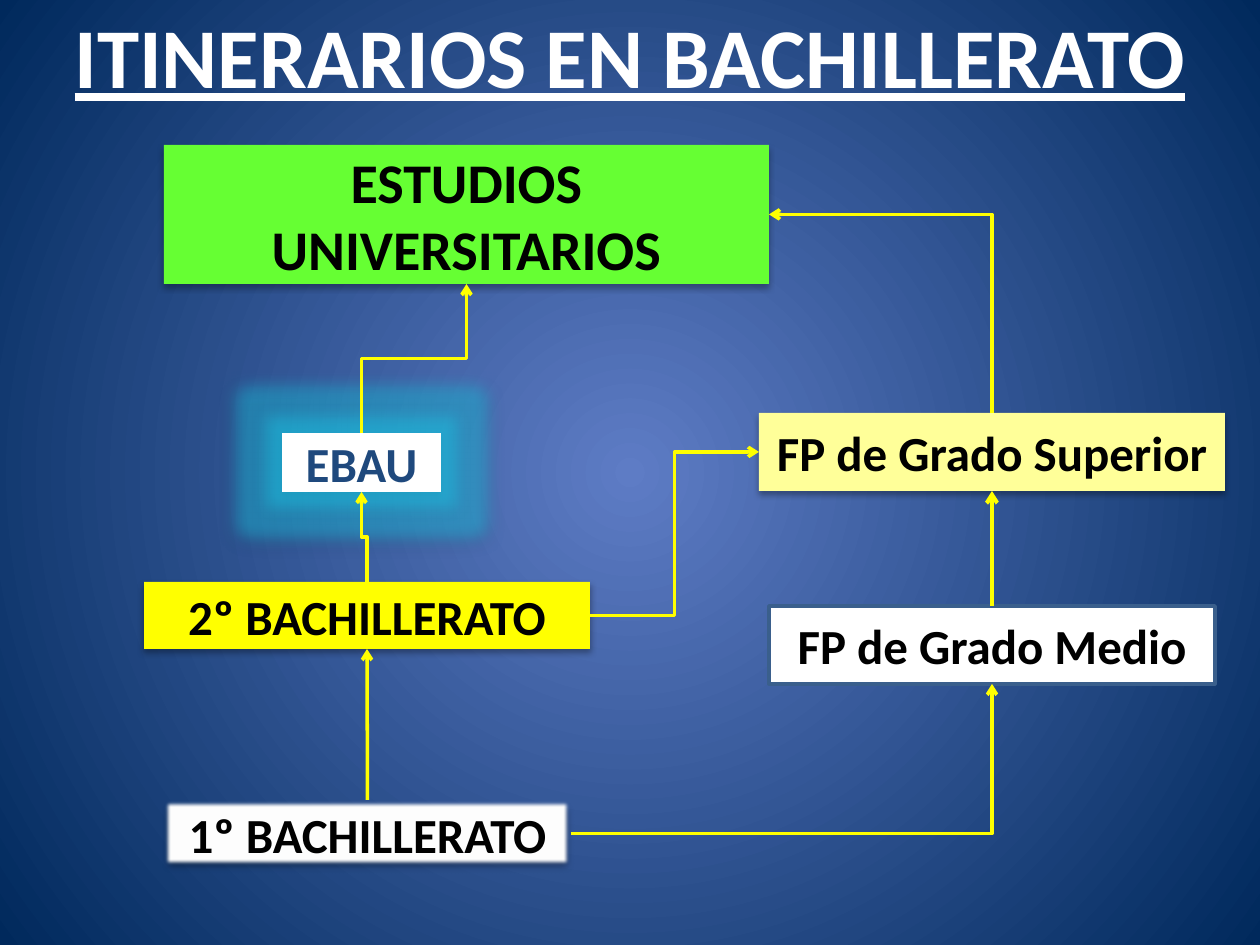
from lxml.etree import SubElement, fromstring
from pptx import Presentation
from pptx.dml.color import RGBColor
from pptx.enum.shapes import MSO_CONNECTOR, MSO_SHAPE
from pptx.enum.text import MSO_ANCHOR, MSO_AUTO_SIZE, PP_ALIGN
from pptx.oxml.ns import nsdecls, qn
from pptx.util import Pt

EMU_PER_PX = 914400 / 126
FONT = "Calibri"
TOP, LEFT, BOTTOM, RIGHT = range(4)
COLORS = {
    "center": "5E7CC5", "edge": "00295C", "white": "FFFFFF", "black": "000000",
    "green": "66FF33", "cream": "FFFF99", "yellow": "FFFF00", "navy": "1F497D",
    "border": "3A5F8C", "glow": "1CD3F4",
}
SHADOW = (
    '<a:outerShdw blurRad="44450" dist="27940" dir="5400000" rotWithShape="0">'
    f'<a:srgbClr val="{COLORS["black"]}"><a:alpha val="32000"/></a:srgbClr></a:outerShdw>'
)
GLOW = (
    f'<a:glow rad="228600"><a:srgbClr val="{COLORS["glow"]}">'
    '<a:alpha val="40000"/></a:srgbClr></a:glow>'
)
SOFT_EDGE = '<a:softEdge rad="31750"/>'


def px(n):
    return round(n * EMU_PER_PX)


def rgb(name):
    return RGBColor.from_string(COLORS[name])


def set_background(s):
    s.background.fill.solid()
    bg_pr = s.background._cSld.bg.bgPr
    stops = "".join(
        f'<a:gs pos="{pos}"><a:srgbClr val="{COLORS[name]}"/></a:gs>'
        for pos, name in ((0, "center"), (100000, "edge"))
    )
    grad = fromstring(
        f'<a:gradFill {nsdecls("a")} rotWithShape="1"><a:gsLst>{stops}</a:gsLst>'
        '<a:path path="circle"><a:fillToRect l="50000" t="50000" r="50000" b="50000"/>'
        '</a:path></a:gradFill>'
    )
    bg_pr.replace(bg_pr[0], grad)


def write(sp, text, size, color, underline=None):
    tf = sp.text_frame
    tf.word_wrap = True
    tf.auto_size = MSO_AUTO_SIZE.NONE
    tf.vertical_anchor = MSO_ANCHOR.MIDDLE
    p = tf.paragraphs[0]
    p.alignment = PP_ALIGN.CENTER
    r = p.add_run()
    r.text = text
    font = r.font
    font.name, font.size, font.bold, font.underline = FONT, Pt(size), True, underline
    font.color.rgb = rgb(color)


def add_title(s, text):
    title = s.shapes.title
    title.left, title.top, title.width, title.height = map(px, (0, -24, 1260, 157))
    write(title, text, 48.6, "white", True)


def add_box(s, text, bounds, fill, color="black", size=28, effects=SHADOW, border=None):
    sp = s.shapes.add_shape(MSO_SHAPE.RECTANGLE, *map(px, bounds))
    sp.shadow.inherit = False
    sp.fill.solid()
    sp.fill.fore_color.rgb = rgb(fill)
    if border:
        sp.line.color.rgb = rgb(border)
        sp.line.width = Pt(2)
    else:
        sp.line.fill.background()
    if effects:
        sp_pr = sp._element.spPr
        effect_list = fromstring(f'<a:effectLst {nsdecls("a")}>{effects}</a:effectLst>')
        sp_pr.replace(sp_pr.find(qn("a:effectLst")), effect_list)
    write(sp, text, size, color)
    return sp


def add_arrow(s, start, start_side, end, end_side, kind=MSO_CONNECTOR.STRAIGHT, width=2):
    cxn = s.shapes.add_connector(kind, 0, 0, 0, 0)
    cxn.begin_connect(start, start_side)
    cxn.end_connect(end, end_side)
    cxn.line.color.rgb = rgb("yellow")
    cxn.line.width = Pt(width)
    sp_pr = cxn._element.spPr
    SubElement(sp_pr.find(qn("a:ln")), qn("a:tailEnd"), type="arrow")
    SubElement(sp_pr, qn("a:effectLst"))
    return cxn


def add_elbow(s, start, start_side, end, end_side):
    cxn = add_arrow(s, start, start_side, end, end_side, MSO_CONNECTOR.ELBOW)
    dx, dy = cxn.end_x - cxn.begin_x, cxn.end_y - cxn.begin_y
    mid_x, mid_y = (cxn.begin_x + cxn.end_x) // 2, (cxn.begin_y + cxn.end_y) // 2
    upward = start_side == TOP
    w, h = (abs(dy), abs(dx)) if upward else (abs(dx), abs(dy))
    cxn.left, cxn.top, cxn.width, cxn.height = mid_x - w // 2, mid_y - h // 2, w, h
    sp_pr = cxn._element.spPr
    xfrm = sp_pr.find(qn("a:xfrm"))
    xfrm.set("rot", "16200000" if upward else "0")
    xfrm.set("flipH", "0")
    xfrm.set("flipV", "1" if (dx if upward else dy) < 0 else "0")
    one_turn = (start_side in (TOP, BOTTOM)) != (end_side in (TOP, BOTTOM))
    sp_pr.find(qn("a:prstGeom")).set("prst", "bentConnector2" if one_turn else "bentConnector3")


def main():
    prs = Presentation()
    prs.slide_width, prs.slide_height = px(1260), px(945)
    s = prs.slides.add_slide(prs.slide_layouts[5])
    set_background(s)
    add_title(s, "ITINERARIOS EN BACHILLERATO")

    superior = add_box(s, "FP de Grado Superior", (759, 413, 466, 78), "cream")
    university = add_box(s, "ESTUDIOS UNIVERSITARIOS", (164, 145, 605, 139), "green", size=32)
    first = add_box(s, "1º BACHILLERATO", (164, 800, 407, 67), "white",
                    effects=SHADOW + SOFT_EDGE)
    medio = add_box(s, "FP de Grado Medio", (769, 606, 446, 78), "white",
                    effects=None, border="border")
    ebau = add_box(s, "EBAU", (282, 433, 159, 59), "white", "navy", effects=GLOW + SHADOW)
    second = add_box(s, "2º BACHILLERATO", (144, 582, 446, 67), "yellow")

    add_arrow(s, first, TOP, second, BOTTOM)
    add_arrow(s, medio, TOP, superior, BOTTOM, width=2.25)
    for route in (
        (second, RIGHT, superior, LEFT),
        (superior, TOP, university, RIGHT),
        (second, TOP, ebau, BOTTOM),
        (ebau, TOP, university, BOTTOM),
        (first, RIGHT, medio, BOTTOM),
    ):
        add_elbow(s, *route)
    prs.save("out.pptx")


if __name__ == "__main__":
    main()
